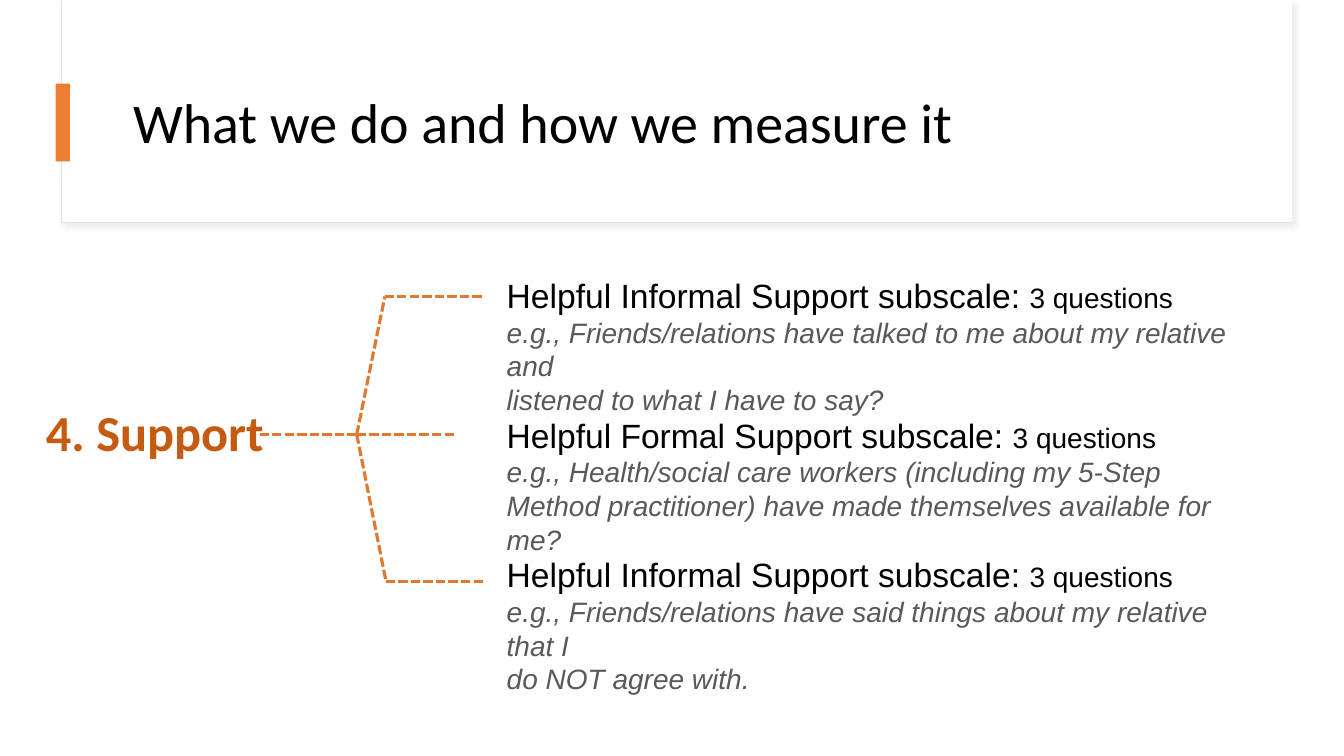
from lxml import etree
from pptx import Presentation
from pptx.dml.color import RGBColor
from pptx.enum.dml import MSO_LINE_DASH_STYLE as Dash
from pptx.enum.shapes import MSO_CONNECTOR_TYPE as Connector, MSO_SHAPE as Shape
from pptx.enum.text import MSO_ANCHOR as Anchor, MSO_AUTO_SIZE as AutoSize, PP_ALIGN as Align
from pptx.oxml import parse_xml
from pptx.oxml.ns import nsdecls, qn
from pptx.util import Cm, Pt

WHITE = RGBColor(0xFF, 0xFF, 0xFF)
BLACK = RGBColor(0x00, 0x00, 0x00)
GREY = RGBColor(0x59, 0x59, 0x59)
CARD_LINE = RGBColor(0xE1, 0xE1, 0xE1)
ACCENT = RGBColor(0xED, 0x7D, 0x31)
DARK_ORANGE = RGBColor(0xC5, 0x5A, 0x11)
BRANCH = RGBColor(0xE1, 0x78, 0x2F)

CARD_SHADOW = (
    f'<a:effectLst {nsdecls("a")}>'
    '<a:outerShdw blurRad="50800" dist="38100" dir="2700000" algn="tl" rotWithShape="0">'
    '<a:srgbClr val="D9D9D9"><a:alpha val="50000"/></a:srgbClr>'
    '</a:outerShdw></a:effectLst>'
)

# Heading, question count, example lines, wrapping
SUBSCALES = [
    ("Helpful Informal Support subscale: ", "3 questions",
     ["e.g., Friends/relations have talked to me about my relative and",
      "listened to what I have to say?"], False),
    ("Helpful Formal Support subscale: ", "3 questions",
     ["e.g., Health/social care workers (including my 5-Step Method practitioner) "
      "have made themselves available for me?"], True),
    ("Helpful Informal Support subscale: ", "3 questions",
     ["e.g., Friends/relations have said things about my relative that I",
      "do NOT agree with."], False),
]


def add_run(paragraph, text, size, color, font="Arial", bold=False, italic=False):
    run = paragraph.add_run()
    run.text = text
    run.font.name = font
    run.font.size = Pt(size)
    run.font.bold = bold
    run.font.italic = italic
    run.font.color.rgb = color


def add_rectangle(slide, left, top, width, height, fill):
    shape = slide.shapes.add_shape(
        Shape.RECTANGLE, Cm(left), Cm(top), Cm(width), Cm(height))
    shape.shadow.inherit = False
    shape.fill.solid()
    shape.fill.fore_color.rgb = fill
    shape.line.fill.background()
    return shape


def add_text_box(slide, left, top, width, height, wrap):
    box = slide.shapes.add_textbox(Cm(left), Cm(top), Cm(width), Cm(height))
    box.text_frame.word_wrap = wrap
    box.text_frame.auto_size = AutoSize.SHAPE_TO_FIT_TEXT
    return box.text_frame


def add_dashed_line(slide, start, end):
    line = slide.shapes.add_connector(
        Connector.STRAIGHT, *(Cm(value) for value in (*start, *end)))
    line.line.color.rgb = BRANCH
    line.line.width = Pt(2.25)
    line.line.dash_style = Dash.SQUARE_DOT
    properties = line._element.spPr
    # SQUARE_DOT is the preset named sysDot; these lines use sysDash
    properties.find(".//" + qn("a:prstDash")).set("val", "sysDash")
    etree.SubElement(properties, qn("a:effectLst"))


def add_header(slide, left, top, width, height):
    # Card with a soft shadow and a white panel over it
    card = add_rectangle(slide, left, top, width, height, WHITE)
    card.line.color.rgb = CARD_LINE
    card.line.width = Pt(0.75)
    properties = card._element.spPr
    properties.remove(properties.find(qn("a:effectLst")))
    properties.append(parse_xml(CARD_SHADOW))
    add_rectangle(slide, left + 0.02, top, width - 0.02, height - 0.02, WHITE)

    # Title, brought in front of the card
    title = slide.shapes.title
    title.left, title.top = Cm(left + 1.55), Cm(top + 1.52)
    title.width, title.height = Cm(28.24), Cm(3.28)
    slide.shapes._spTree.append(title._element)
    frame = title.text_frame
    frame.auto_size = AutoSize.NONE
    frame.vertical_anchor = Anchor.MIDDLE
    paragraph = frame.paragraphs[0]
    paragraph.alignment = Align.LEFT
    paragraph.line_spacing = 0.9
    add_run(paragraph, "What we do and how we measure it", 40, BLACK, "Calibri")

    # Accent bar on the card's left edge
    add_rectangle(slide, left - 0.15, top + 2.11, 0.36, 1.96, ACCENT)


def add_branches(slide, left, top, width, height):
    # Topic label
    label = add_text_box(slide, left, top + 2.51, 6.1, 1.8, False)
    add_run(label.paragraphs[0], "4. Support", 36, DARK_ORANGE, "Calibri", bold=True)

    # Hub with a straight line through it and two bent branches
    hub_x, hub_y, reach = left + 8.08, top + 3.48, 2.44
    hub = (hub_x, hub_y)
    add_dashed_line(slide, hub, (hub_x - reach, hub_y))
    add_dashed_line(slide, hub, (hub_x + reach, hub_y))
    for corner in ((hub_x + 0.71, top), (hub_x + 0.74, top + height)):
        add_dashed_line(slide, hub, corner)
        add_dashed_line(slide, (corner[0] + reach, corner[1]), corner)


def add_subscales(slide, left, top, width, pitch):
    for index, (heading, count, examples, wrap) in enumerate(SUBSCALES):
        frame = add_text_box(slide, left, top + index * pitch, width, 3, wrap)
        paragraph = frame.paragraphs[0]
        add_run(paragraph, heading, 24, BLACK)
        add_run(paragraph, count, 20, BLACK)
        for example in examples:
            add_run(frame.add_paragraph(), example, 20, GREY, italic=True)


def main():
    presentation = Presentation()
    presentation.slide_width, presentation.slide_height = Cm(33.87), Cm(19.05)
    slide = presentation.slides.add_slide(presentation.slide_layouts[5])
    add_header(slide, 1.55, 0, 31.01, 5.61)
    add_branches(slide, 0.91, 7.47, 11.26, 7.19)
    add_subscales(slide, 12.52, 6.8, 19.18, 3.52)
    presentation.save("out.pptx")


if __name__ == "__main__":
    main()
